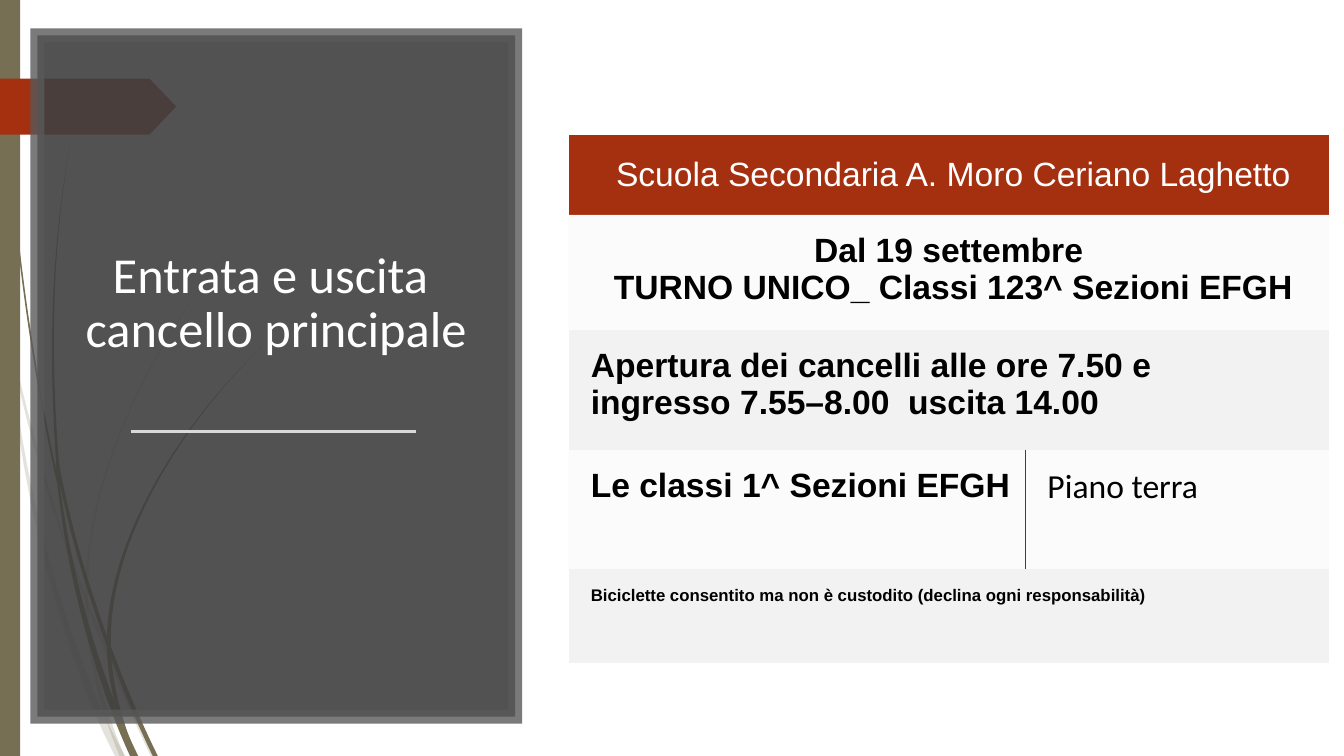
from lxml import etree
from pptx import Presentation
from pptx.dml.color import RGBColor
from pptx.enum.shapes import MSO_CONNECTOR, MSO_SHAPE
from pptx.enum.text import MSO_ANCHOR, PP_ALIGN
from pptx.oxml.ns import qn
from pptx.util import Inches, Pt

CENTER, LEFT = PP_ALIGN.CENTER, PP_ALIGN.LEFT
TOP, MIDDLE, BOTTOM = MSO_ANCHOR.TOP, MSO_ANCHOR.MIDDLE, MSO_ANCHOR.BOTTOM
RECTANGLE, FLAG = MSO_SHAPE.RECTANGLE, MSO_SHAPE.PENTAGON
COLORS = {"olive": "766F54", "rust": "A53010", "panel": "404040", "frame": "595959",
          "rule": "D9D9D9", "band": "F2F2F2", "divider": "3F3F3F",
          "white": "FFFFFF", "black": "000000"}
NO_STYLE = "{2D5ABB26-0587-4C30-8999-92F81FD0307C}"
CURVE_STEPS = 24

prs = Presentation()
prs.slide_width, prs.slide_height = Inches(13.33), Inches(7.5)
slide = prs.slides.add_slide(prs.slide_layouts[6])
shapes = slide.shapes


def share(x, y, *size):
    """Turn percentages of the slide's width and height, in turn, into lengths."""
    sides = (prs.slide_width, prs.slide_height) * 2
    return [int(side * part / 100) for side, part in zip(sides, (x, y, *size))]


def paint(fill, color, opacity=100):
    """Fill with a solid named colour at an opacity in percent."""
    fill.solid()
    fill.fore_color.rgb = RGBColor.from_string(COLORS[color])
    if opacity < 100:
        rgb = fill._xPr.find(".//" + qn("a:srgbClr"))
        etree.SubElement(rgb, qn("a:alpha")).set("val", str(opacity * 1000))


# Grass blades in inches: Bezier points of the spine, width at both ends, opacity
blades = [
    ([(0, 2.82), (.25, 4.4), (.8, 6), (1.52, 7.5)], .02, .05, 20),
    ([(.11, 3.5), (.2, 4.9), (.7, 6.6), (1.19, 7.5)], .01, .1, 20),
    ([(3.12, 1.53), (2.1, 2.5), (.84, 4.25), (.86, 5.9)], 0, .03, 20),
    ([(.86, 5.9), (.85, 6.4), (1, 7), (1.21, 7.5)], .03, .05, 20),
    ([(.04, 0), (.05, 1.7), (.25, 3.3), (.57, 4.77)], .01, .02, 100),
    ([(.57, 4.6), (.75, 5.6), (1.15, 6.7), (1.54, 7.5)], .03, .05, 100),
    ([(.56, 4.6), (.65, 5.6), (.95, 6.7), (1.33, 7.5)], .02, .08, 100),
    ([(.7, 1.41), (.5, 2.5), (.49, 3.6), (.58, 4.7)], 0, .03, 100),
    ([(2.6, 3.44), (1.9, 4.1), (1.06, 5.29), (1.08, 6.4)], 0, .04, 100),
    ([(1.08, 6.4), (1.08, 6.75), (1.2, 7.2), (1.34, 7.5)], .04, .04, 100),
]
for spine, start_width, end_width, opacity in blades:
    left_edge, right_edge = [], []
    for step in range(CURVE_STEPS + 1):
        t = step / CURVE_STEPS
        weights = ((1 - t) ** 3, 3 * t * (1 - t) ** 2, 3 * t * t * (1 - t), t ** 3)
        x, y = (sum(w * point[axis] for w, point in zip(weights, spine)) for axis in (0, 1))
        half = (start_width + (end_width - start_width) * t) / 2
        left_edge.append((Inches(x - half), Inches(y)))
        right_edge.append((Inches(x + half), Inches(y)))
    builder = shapes.build_freeform(*left_edge[0])
    builder.add_line_segments(left_edge[1:] + right_edge[::-1], close=True)
    grass = builder.convert_to_shape()
    grass.shadow.inherit = False
    paint(grass.fill, "olive", opacity)
    grass.line.fill.background()

# Side bar, flag and title panel
for kind, box, color, opacity in (
        (RECTANGLE, (0, 0, 1.5, 100), "olive", 100),
        (FLAG, (0, 10.4, 13.12, 7.4), "rust", 100),
        (RECTANGLE, (2.78, 4.67, 35.56, 90.13), "panel", 90)):
    block = shapes.add_shape(kind, *share(*box))
    block.shadow.inherit = False
    paint(block.fill, color, opacity)
    if kind == FLAG:
        block.adjustments[0] = 0.48
    if color == "panel":
        block.line.width = Pt(10)
        paint(block.line.fill, "frame", 80)
        etree.SubElement(block.line._ln, qn("a:miter")).set("lim", "800000")
    else:
        block.line.fill.background()

title = shapes.add_textbox(*share(5.55, 13.33, 30, 34.8)).text_frame
title.word_wrap = True
title.vertical_anchor = BOTTOM
title.text = "Entrata e uscita \vcancello principale"
heading = title.paragraphs[0]
heading.alignment, heading.line_spacing = CENTER, 0.9
for run in heading.runs:
    run.font.size, run.font.name = Pt(36), "Calibri"
    run.font.color.rgb = RGBColor.from_string(COLORS["white"])

rule = shapes.add_connector(MSO_CONNECTOR.STRAIGHT, *share(9.75, 57.07, 30.98, 57.07))
rule.line.width = Pt(1.75)
paint(rule.line.fill, "rule")
etree.SubElement(rule._element.spPr, qn("a:effectLst"))

# Timetable: row height in percent, cell texts, size, bold, alignment, fill, opacity
rows = [
    (10.53, ["Scuola Secondaria A. Moro Ceriano Laghetto"], 24, False, CENTER, "rust", 100),
    (14.4, ["Dal 19 settembre \nTURNO UNICO_ Classi 123^ Sezioni EFGH"],
     24, True, CENTER, "band", 30),
    (15.87, ["Apertura dei cancelli alle ore 7.50 e\ningresso 7.55–8.00  uscita 14.00"],
     24, True, LEFT, "band", 100),
    (15.87, ["Le classi 1^ Sezioni EFGH", "Piano terra"], 24, True, LEFT, "band", 30),
    (12.4, ["Biciclette consentito ma non è custodito (declina ogni responsabilità)"],
     12, True, LEFT, "band", 100),
]
table = shapes.add_table(len(rows), 2, *share(42.31, 17.87, 56.56, 69.07)).table
table.first_row = table.horz_banding = False
table._tbl.tblPr.find(qn("a:tableStyleId")).text = NO_STYLE
table.columns[0].width, table.columns[1].width = share(33.98, 0, 22.58)[::2]
for r, (height, texts, size, bold, alignment, color, opacity) in enumerate(rows):
    table.rows[r].height = share(0, height)[1]
    if len(texts) == 1:
        table.cell(r, 0).merge(table.cell(r, 1))
    for c, text in enumerate(texts):
        cell = table.cell(r, c)
        cell.margin_left, cell.margin_right = Inches(0.22), Inches(0.13)
        cell.margin_top = cell.margin_bottom = Inches(0.17)
        cell.vertical_anchor = MIDDLE if r == 0 else TOP
        paint(cell.fill, color, opacity)
        cell.text_frame.text = text
        for paragraph in cell.text_frame.paragraphs:
            paragraph.alignment = alignment
            font = paragraph.runs[0].font
            font.size, font.bold = Pt(size), bold and c == 0
            font.name = "Arial" if c == 0 else "Calibri"
            font.color.rgb = RGBColor.from_string(COLORS["white" if r == 0 else "black"])
        if len(texts) == 2:
            border = etree.Element(qn("a:lnL" if c else "a:lnR"), w=str(Pt(0.75)))
            ink = etree.SubElement(border, qn("a:solidFill"))
            etree.SubElement(ink, qn("a:srgbClr")).set("val", COLORS["divider"])
            cell._tc.tcPr.insert(0, border)

prs.save("out.pptx")
